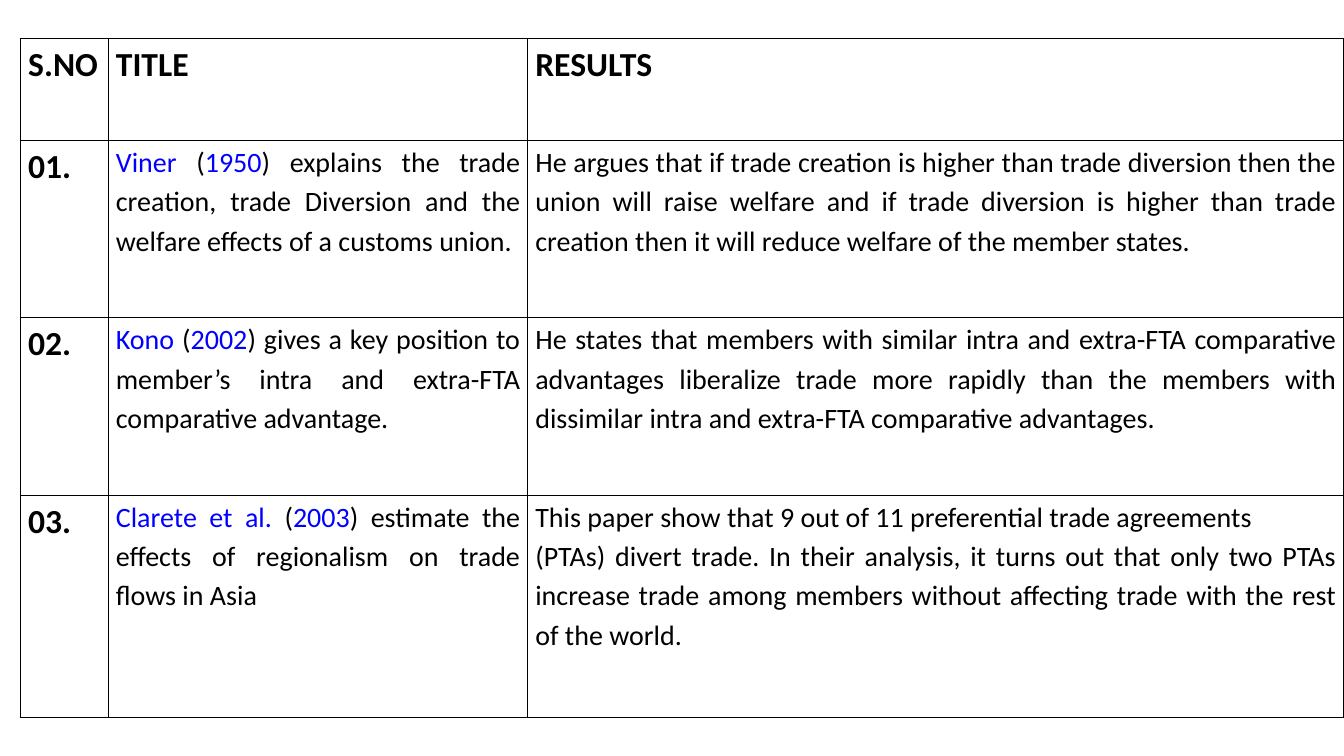
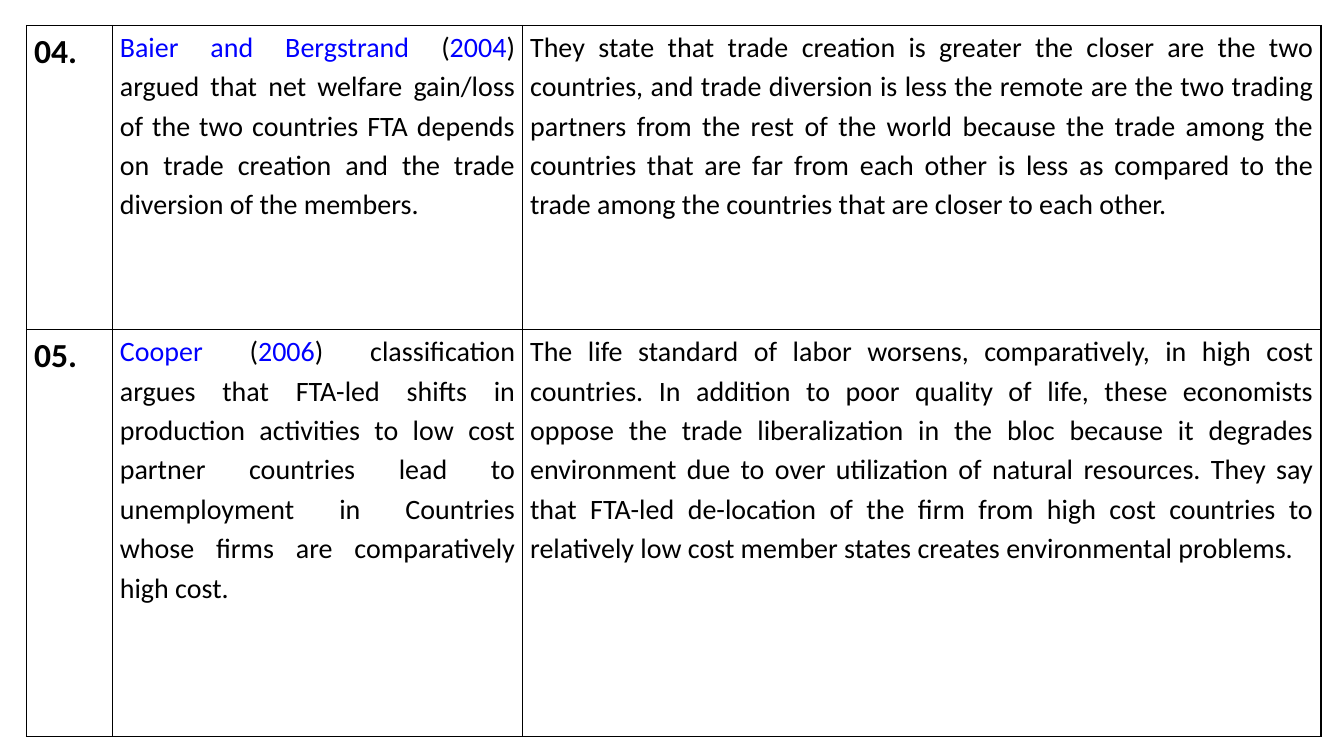
"""Build two slides that review the literature on trade agreements."""
from lxml import etree
from pptx import Presentation
from pptx.dml.color import RGBColor
from pptx.enum.text import MSO_ANCHOR, PP_ALIGN
from pptx.oxml.ns import qn
from pptx.util import Cm, Pt

LEFT, JUST, TOP = PP_ALIGN.LEFT, PP_ALIGN.JUSTIFY, MSO_ANCHOR.TOP
FONT, BLACK, BLUE = "Calibri", "000000", "0000FF"
HEAD = ("S.NO", "TITLE", "RESULTS")

EARLY = [
    ("01.", "Viner ", "1950",
     ") explains the trade creation, trade Diversion and the welfare effects "
     "of a customs union.",
     ["He argues that if trade creation is higher than trade diversion then "
      "the union will raise welfare and if trade diversion is higher than "
      "trade creation then it will reduce welfare of the member states."]),
    ("02.", "Kono ", "2002",
     ") gives a key position to member’s intra and extra-FTA comparative "
     "advantage.",
     ["He states that members with similar intra and extra-FTA comparative "
      "advantages liberalize trade more rapidly than the members with "
      "dissimilar intra and extra-FTA comparative advantages."]),
    ("03.", "Clarete et al. ", "2003",
     ") estimate the effects of regionalism on trade flows in Asia",
     ["This paper show that 9 out of 11 preferential trade agreements",
      "(PTAs) divert trade. In their analysis, it turns out that only two "
      "PTAs increase trade among members without affecting trade with the "
      "rest of the world."]),
]
LATE = [
    ("04.", "Baier and Bergstrand ", "2004",
     ") argued that net welfare gain/loss of the two countries FTA depends on "
     "trade creation and the trade diversion of the members.",
     ["They state that trade creation is greater the closer are the two "
      "countries, and trade diversion is less the remote are the two trading "
      "partners from the rest of the world because the trade among the "
      "countries that are far from each other is less as compared to the "
      "trade among the countries that are closer to each other."]),
    ("05.", "Cooper ", "2006",
     ") classification argues that FTA-led shifts in production activities to "
     "low cost partner countries lead to unemployment in Countries whose "
     "firms are comparatively high cost.",
     ["The life standard of labor worsens, comparatively, in high cost "
      "countries. In addition to poor quality of life, these economists "
      "oppose the trade liberalization in the bloc because it degrades "
      "environment due to over utilization of natural resources. They say "
      "that FTA-led de-location of the firm from high cost countries to "
      "relatively low cost member states creates environmental problems."]),
]
PAGES = [
    dict(head=HEAD, works=EARLY, left=0.52, top=0.97,
         cols=(2.21, 10.57, 20.57), rows=(2.57, 4.47, 4.47, 5.61)),
    dict(head=None, works=LATE, left=0.67, top=0.64,
         cols=(2.16, 10.34, 20.12), rows=(7.67, 10.24)),
]


def color(text):
    return RGBColor.from_string(text)


def border(cell):
    props = cell._tc.get_or_add_tcPr()
    for side in ("a:lnL", "a:lnR", "a:lnT", "a:lnB"):
        line = etree.SubElement(props, qn(side), w=str(Pt(1)))
        fill = etree.SubElement(line, qn("a:solidFill"))
        etree.SubElement(fill, qn("a:srgbClr"), val=BLACK)


def write(cell, paras, size, bold, align):
    border(cell)
    cell.fill.background()
    cell.margin_left = cell.margin_right = Cm(0.19)
    cell.margin_top = cell.margin_bottom = 0
    cell.vertical_anchor = TOP
    frame = cell.text_frame
    for i, runs in enumerate(paras):
        para = frame.add_paragraph() if i else frame.paragraphs[0]
        para.alignment, para.line_spacing = align, 1.15
        for text, tint in runs:
            run = para.add_run()
            run.text = text
            font = run.font
            font.name, font.size, font.bold = FONT, Pt(size), bold
            font.color.rgb = color(tint)


def label(cell, text):
    write(cell, [[(text, BLACK)]], 24, True, LEFT)


def body(cell, paras):
    write(cell, paras, 20, False, JUST)


def add_page(deck, page):
    slide = deck.slides.add_slide(deck.slide_layouts[6])
    cols, rows = page["cols"], page["rows"]
    table = slide.shapes.add_table(
        len(rows), len(cols), Cm(page["left"]), Cm(page["top"]),
        Cm(sum(cols)), Cm(sum(rows))).table
    table.first_row = table.horz_banding = False
    for col, width in zip(table.columns, cols):
        col.width = Cm(width)
    for row, height in zip(table.rows, rows):
        row.height = Cm(height)
    start = 0
    if page["head"]:
        start = 1
        for col, text in enumerate(page["head"]):
            label(table.cell(0, col), text)
    for row, work in enumerate(page["works"], start):
        number, author, year, claim, results = work
        label(table.cell(row, 0), number)
        body(table.cell(row, 1), [[(author, BLUE), ("(", BLACK),
                                   (year, BLUE), (claim, BLACK)]])
        body(table.cell(row, 2), [[(text, BLACK)] for text in results])


def main():
    deck = Presentation()
    deck.slide_width, deck.slide_height = Cm(33.87), Cm(19.05)
    for page in PAGES:
        add_page(deck, page)
    deck.save("out.pptx")


if __name__ == "__main__":
    main()
